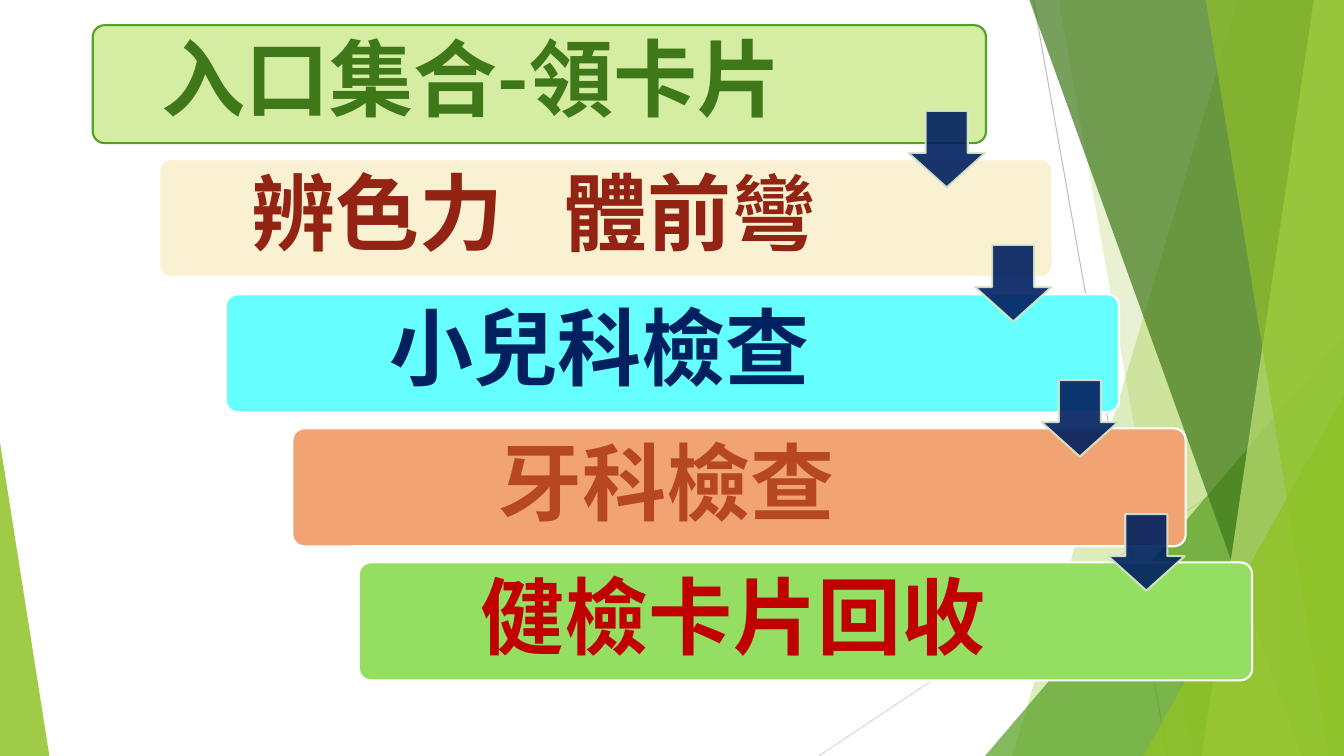
from lxml.etree import SubElement
from pptx import Presentation
from pptx.dml.color import RGBColor
from pptx.enum.shapes import MSO_CONNECTOR, MSO_SHAPE
from pptx.enum.text import MSO_ANCHOR, PP_ALIGN
from pptx.oxml.ns import qn
from pptx.util import Pt

SCALE = 9144  # EMU per px, 100 px to the inch
WIDTH, HEIGHT = 1333, 750

COLORS = {
    "lime": "90C226", "leaf": "54A021", "forest": "3F7819", "pale_lime": "C0E474",
    "light_gray": "D9D9D9", "gray": "BFBFBF", "white": "FFFFFF",
    "pale_green": "D5EDA2", "cream": "FAF1D2", "cyan": "66FFFF",
    "orange": "F1A374", "green": "94DE61",
    "maroon": "932313", "navy": "002060", "rust": "B64720", "red": "C00000",
    "arrow_edge": "DBE9CD",
}


class SlideBuilder:
    def __init__(self, slide):
        self.shapes = slide.shapes

    def color(self, color_format, name, alpha=100):
        color_format.rgb = RGBColor.from_string(COLORS[name])
        if alpha < 100:
            element = color_format._xFill.find(qn("a:srgbClr"))
            SubElement(element, qn("a:alpha"), val=str(alpha * 1000))

    def style(self, shape, fill, alpha=100, line=None):
        shape.shadow.inherit = False
        shape.fill.solid()
        self.color(shape.fill.fore_color, fill, alpha)
        if line:
            shape.line.width = Pt(1.5)
            shape.line.fill.solid()
            self.color(shape.line.fill.fore_color, line, alpha)
        else:
            shape.line.fill.background()

    def preset(self, kind, box, adjustments, fill, alpha=100, line=None):
        shape = self.shapes.add_shape(kind, *(value * SCALE for value in box))
        for index, value in enumerate(adjustments):
            shape.adjustments[index] = value
        self.style(shape, fill, alpha, line)

    def facet(self, top_left, bottom_left, fill, alpha):
        """Full-height panel that reaches the right edge of the slide."""
        builder = self.shapes.build_freeform(top_left, 0, scale=SCALE)
        corners = [(WIDTH, 0), (WIDTH, HEIGHT), (bottom_left, HEIGHT)]
        builder.add_line_segments(corners, close=True)
        self.style(builder.convert_to_shape(), fill, alpha)

    def line(self, ends, color):
        connector = self.shapes.add_connector(
            MSO_CONNECTOR.STRAIGHT, *(value * SCALE for value in ends))
        connector.line.width = Pt(0.75)
        self.color(connector.line.color, color)
        SubElement(connector._element.spPr, qn("a:effectLst"))

    def label(self, box, words, font_name, color):
        text_box = self.shapes.add_textbox(*(value * SCALE for value in box))
        frame = text_box.text_frame
        frame.word_wrap = True
        frame.vertical_anchor = MSO_ANCHOR.MIDDLE
        frame.margin_left = frame.margin_right = 25 * SCALE
        frame.margin_top = frame.margin_bottom = 25 * SCALE
        paragraph = frame.paragraphs[0]
        paragraph.alignment = PP_ALIGN.CENTER
        paragraph.line_spacing = 0.9
        paragraph.font.name = font_name
        paragraph.font.size = Pt(60)
        paragraph.font.bold = True
        self.color(paragraph.font.color, color)
        for index, word in enumerate(words):
            if index:  # one widened space between words
                gap = paragraph.add_run()
                gap.text = " "
                gap.font._element.set("spc", "2900")
            paragraph.add_run().text = word


def main():
    presentation = Presentation()
    presentation.slide_width = WIDTH * SCALE
    presentation.slide_height = HEIGHT * SCALE
    builder = SlideBuilder(presentation.slides.add_slide(presentation.slide_layouts[6]))

    # Background facets
    triangle = MSO_SHAPE.ISOSCELES_TRIANGLE
    builder.line((1025, 0, 1158, HEIGHT), "gray")
    builder.line((WIDTH, 403, 812, HEIGHT), "light_gray")
    builder.facet(1228, 1004, "lime", 30)
    builder.facet(1050, 1183, "lime", 20)
    builder.preset(triangle, (977, 333, 356, 417), [1], "leaf", 72)
    builder.facet(1021, 1291, "forest", 70)
    builder.facet(1303, 1192, "pale_lime", 70)
    builder.facet(1196, 1318, "lime", 65)
    builder.preset(triangle, (1134, 393, 199, 357), [1], "lime", 80)
    builder.preset(triangle, (0, 439, 49, 311), [0], "lime", 85)

    # Staircase of steps: words, font, text colour, fill, outline, text width
    steps = [
        (["入口集合-領卡片"], "Karla", "forest", "pale_green", "leaf", 745),
        (["辨色力", "體前彎"], "Courier New", "maroon", "cream", "white", 736),
        (["小兒科檢查"], "Karla", "navy", "cyan", "white", 736),
        (["牙科檢查"], "Karla", "rust", "orange", "white", 736),
        (["健檢卡片回收"], "Karla", "red", "green", "white", 736),
    ]
    offsets = [(66 * index, round(index * 400 / 3)) for index in range(len(steps))]
    for (right, down), step in zip(offsets, steps):
        words, font_name, text_color, fill, outline, text_width = step
        left, top = 92 + right, 25 + down
        builder.preset(MSO_SHAPE.ROUNDED_RECTANGLE, (left, top, 886, 117),
                       [0.1], fill, line=outline)
        builder.label((left + 3, top + 3, text_width, 110), words, font_name, text_color)

    # Arrows from each step to the next
    for right, down in offsets[:-1]:
        builder.preset(MSO_SHAPE.DOWN_ARROW, (901 + right, 110 + down, 76, 76),
                       [0.55, 0.45], "navy", 90, "arrow_edge")

    presentation.save("out.pptx")


if __name__ == "__main__":
    main()
